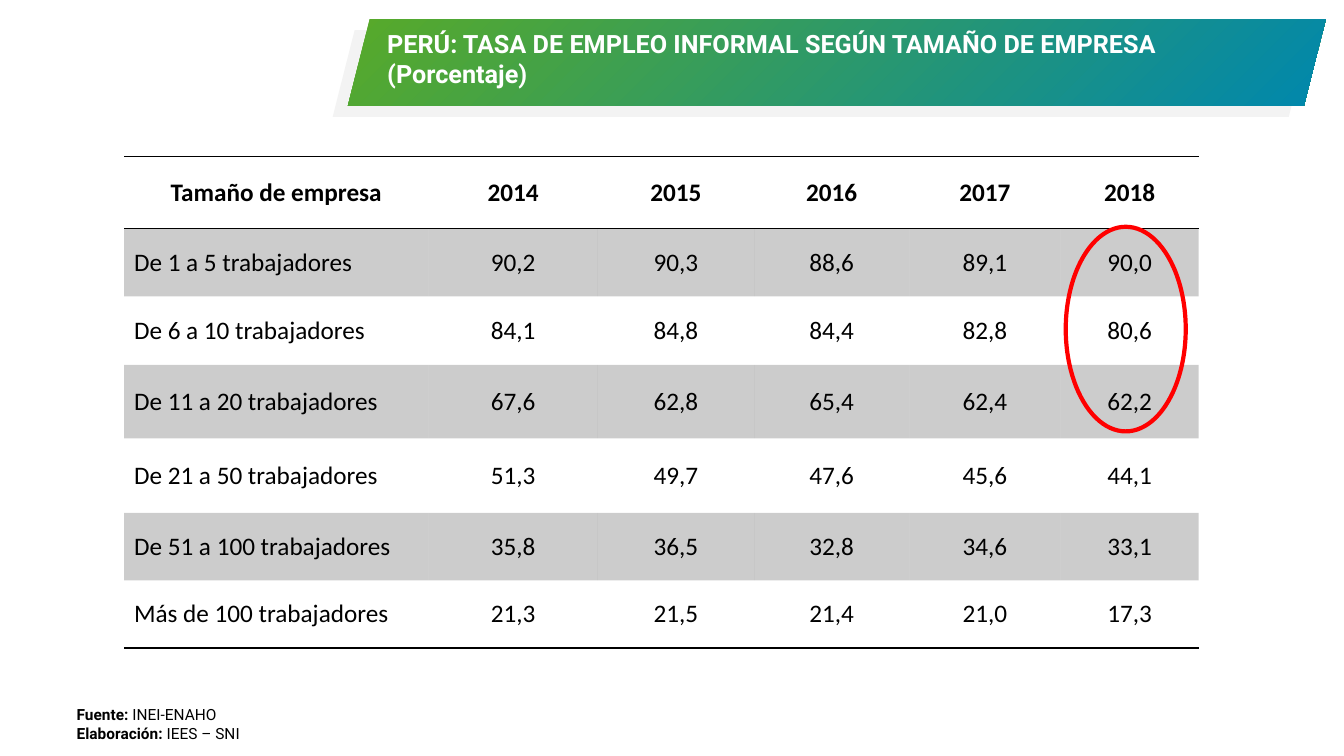
from lxml import etree
from pptx import Presentation
from pptx.dml.color import RGBColor
from pptx.enum.shapes import MSO_SHAPE
from pptx.enum.text import MSO_ANCHOR, MSO_AUTO_SIZE, PP_ALIGN
from pptx.oxml.ns import qn
from pptx.util import Inches, Pt

PARALLELOGRAM, ELLIPSE = MSO_SHAPE.PARALLELOGRAM, MSO_SHAPE.OVAL
LEFT, CENTER = PP_ALIGN.LEFT, PP_ALIGN.CENTER
TOP, MIDDLE = MSO_ANCHOR.TOP, MSO_ANCHOR.MIDDLE
FIT_SHAPE = MSO_AUTO_SIZE.SHAPE_TO_FIT_TEXT
NO_STYLE_NO_GRID = "{2D5ABB26-0587-4C30-8999-92F81FD0307C}"

COLORS = {
    "text": "000000",
    "title": "FFFFFF",
    "shade": "F3F3F3",
    "green": "58AA29",
    "blue": "0087AD",
    "highlight": "FF0000",
}
TITLE = "PERÚ: TASA DE EMPLEO INFORMAL SEGÚN TAMAÑO DE EMPRESA\n(Porcentaje)"
RATES = [
    ["Tamaño de empresa", "2014", "2015", "2016", "2017", "2018"],
    ["De 1 a 5 trabajadores", "90,2", "90,3", "88,6", "89,1", "90,0"],
    ["De 6 a 10 trabajadores", "84,1", "84,8", "84,4", "82,8", "80,6"],
    ["De 11 a 20 trabajadores", "67,6", "62,8", "65,4", "62,4", "62,2"],
    ["De 21 a 50 trabajadores", "51,3", "49,7", "47,6", "45,6", "44,1"],
    ["De 51 a 100 trabajadores", "35,8", "36,5", "32,8", "34,6", "33,1"],
    ["Más de 100 trabajadores", "21,3", "21,5", "21,4", "21,0", "17,3"],
]
COLUMN_WIDTHS = [3.02, 1.68, 1.55, 1.54, 1.5, 1.37]
ROW_HEIGHTS = [0.72, 0.67, 0.68, 0.73, 0.74, 0.67, 0.67]
CREDITS = [("Fuente: ", "INEI-ENAHO"), ("Elaboración: ", "IEES – SNI")]


def rgb(name):
    return RGBColor.from_string(COLORS[name])


def set_font(font, family, size, color, bold=None):
    font.name, font.size, font.bold = family, Pt(size), bold
    font.color.rgb = rgb(color)


def add_banner_layer(slide, left, top):
    banner = slide.shapes.add_shape(
        PARALLELOGRAM, Inches(left), Inches(top), Inches(9.7), Inches(0.86))
    banner.adjustments[0] = 0.253
    banner.shadow.inherit = False
    banner.line.fill.background()
    return banner


def add_banner(slide):
    shade = add_banner_layer(slide, 3.3, 0.3)
    shade.fill.solid()
    shade.fill.fore_color.rgb = rgb("shade")

    front = add_banner_layer(slide, 3.45, 0.19)
    front.fill.gradient()
    front.fill.gradient_angle = 315
    for stop, color in zip(front.fill.gradient_stops, ("green", "blue")):
        stop.color.rgb = rgb(color)


def place_title(slide):
    """Fill the title placeholder and bring it in front of the banner."""
    title = slide.shapes.title
    title.left, title.top = Inches(3.74), Inches(0.23)
    title.width, title.height = Inches(8.98), Inches(0.71)
    frame = title.text_frame
    frame.text = TITLE
    frame.word_wrap = True
    frame.auto_size = FIT_SHAPE
    frame.vertical_anchor = TOP
    for paragraph in frame.paragraphs:
        paragraph.alignment = LEFT
        set_font(paragraph.font, "Roboto", 18, "title", True)
    slide.shapes._spTree.append(title._element)


def add_border(cell, side):
    """Rule one side of a cell; call before the cell gets its fill."""
    border = etree.SubElement(cell._tc.get_or_add_tcPr(), qn(f"a:{side}"), w=str(Pt(1)))
    fill = etree.SubElement(border, qn("a:solidFill"))
    etree.SubElement(fill, qn("a:srgbClr"), val=COLORS["text"])


def shade_cell(cell):
    cell.fill.solid()
    cell.fill.fore_color.rgb = rgb("text")
    color = cell._tc.tcPr.find(f".//{qn('a:solidFill')}/{qn('a:srgbClr')}")
    etree.SubElement(color, qn("a:alpha"), val="20000")


def add_rates_table(slide):
    frame = slide.shapes.add_table(
        len(RATES), len(RATES[0]), Inches(1.23), Inches(1.55),
        Inches(sum(COLUMN_WIDTHS)), Inches(sum(ROW_HEIGHTS)))
    table = frame.table
    table.first_row = table.horz_banding = False
    table._tbl.tblPr.find(qn("a:tableStyleId")).text = NO_STYLE_NO_GRID
    for column, width in zip(table.columns, COLUMN_WIDTHS):
        column.width = Inches(width)
    for row, height in zip(table.rows, ROW_HEIGHTS):
        row.height = Inches(height)

    last = len(RATES) - 1
    for r, values in enumerate(RATES):
        for c, value in enumerate(values):
            cell = table.cell(r, c)
            cell.text = value
            cell.vertical_anchor = MIDDLE
            paragraph = cell.text_frame.paragraphs[0]
            paragraph.alignment = LEFT if r > 0 and c == 0 else CENTER
            set_font(paragraph.font, "Calibri", 18, "text", r == 0)
            if r == 0:
                add_border(cell, "lnT")
            if r in (0, last):
                add_border(cell, "lnB")
            if r % 2:
                shade_cell(cell)
            else:
                cell.fill.background()


def add_highlight(slide):
    ring = slide.shapes.add_shape(
        ELLIPSE, Inches(10.57), Inches(2.25), Inches(1.19), Inches(2.03))
    ring.shadow.inherit = False
    ring.fill.background()
    ring.line.color.rgb = rgb("highlight")
    ring.line.width = Pt(3)


def add_credits(slide):
    box = slide.shapes.add_textbox(Inches(0.64), Inches(6.88), Inches(4.85), Inches(0.37))
    frame = box.text_frame
    frame.word_wrap = True
    frame.margin_left = frame.margin_right = Inches(0.12)
    frame.margin_top = frame.margin_bottom = Inches(0.12)
    for i, (label, source) in enumerate(CREDITS):
        paragraph = frame.add_paragraph() if i else frame.paragraphs[0]
        set_font(paragraph.font, "Roboto", 11, "text")
        for text, bold in ((label, True), (source, False)):
            run = paragraph.add_run()
            run.text = text
            run.font.bold = bold


def main():
    prs = Presentation()
    prs.slide_width, prs.slide_height = Inches(13.33), Inches(7.5)
    slide = prs.slides.add_slide(prs.slide_layouts.get_by_name("Title Only"))
    add_rates_table(slide)
    add_highlight(slide)
    add_banner(slide)
    place_title(slide)
    add_credits(slide)
    prs.save("out.pptx")


if __name__ == "__main__":
    main()
